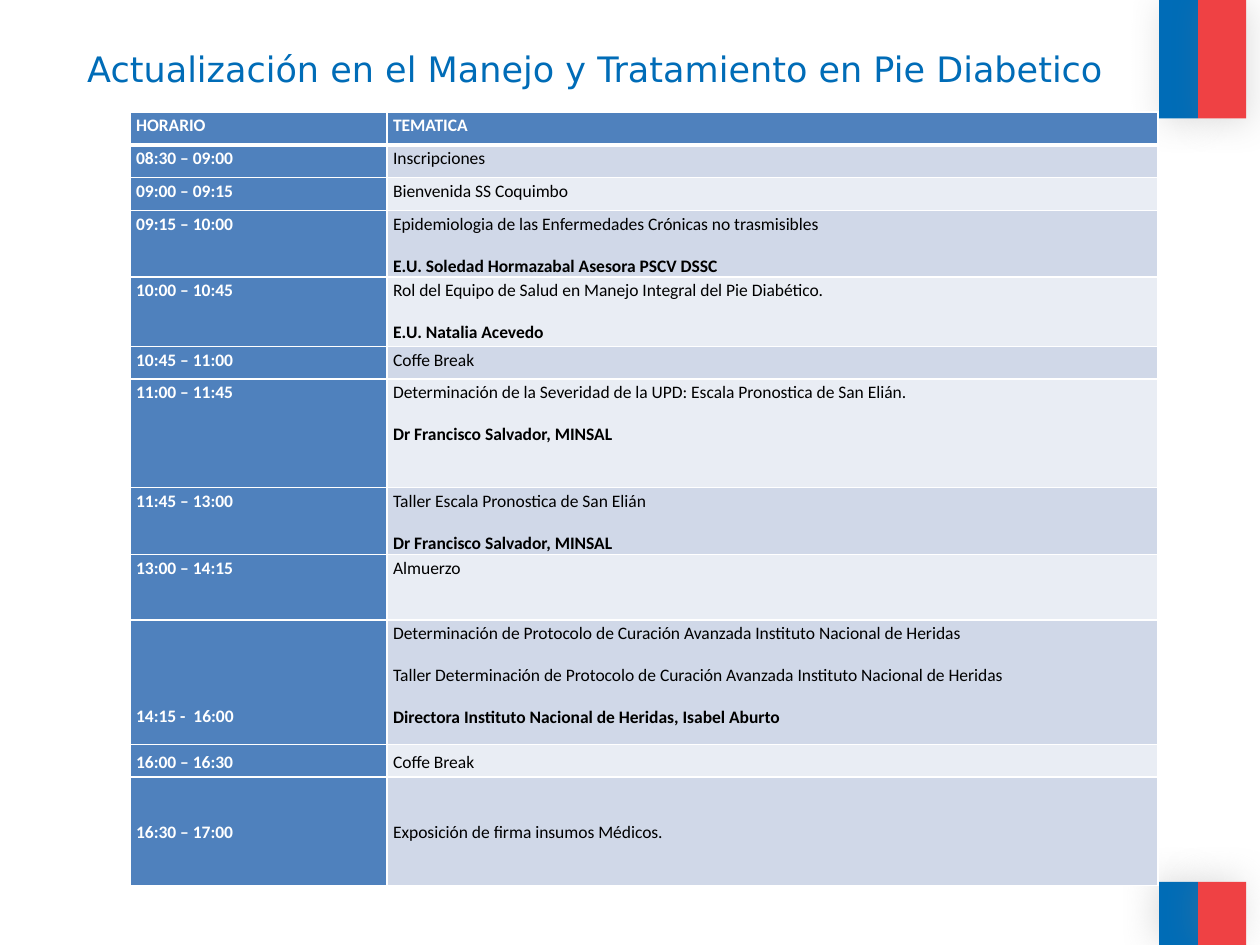
import pptx
import pptx.util
import pptx.oxml
import pptx.oxml.ns
import pptx.dml.color
import pptx.enum.shapes
import pptx.enum.text
from dataclasses import dataclass

Inches = pptx.util.Inches
Pt = pptx.util.Pt
ANCHOR = pptx.enum.text.MSO_ANCHOR


@dataclass(frozen=True)
class Theme:
    blue: str = "006CB7"
    red: str = "EF4144"
    header: str = "4F81BD"
    bands: tuple = ("D0D8E8", "E9EDF4")
    white: str = "FFFFFF"
    black: str = "000000"
    shadow: str = "808080"
    title_font: str = "DejaVu Sans"
    body_font: str = "Calibri"
    title_size: int = 20
    body_size: int = 10


@dataclass
class Session:
    time: str
    lines: tuple
    height: float
    speaker: str = ""
    anchor: ANCHOR = ANCHOR.TOP
    time_offset: float = 0
    topic_offset: float = 0


LINE_STEP = 0.33  # one text line with the space after it

SESSIONS = (
    Session("08:30 – 09:00", ("Inscripciones",), 0.26),
    Session("09:00 – 09:15", ("Bienvenida SS Coquimbo",), 0.26),
    Session("09:15 – 10:00", ("Epidemiologia de las Enfermedades Crónicas no trasmisibles",), 0.53,
            "E.U. Soledad Hormazabal Asesora PSCV DSSC"),
    Session("10:00 – 10:45", ("Rol del Equipo de Salud en Manejo Integral del Pie Diabético.",), 0.55,
            "E.U. Natalia Acevedo"),
    Session("10:45 – 11:00", ("Coffe Break",), 0.26),
    Session("11:00 – 11:45",
            ("Determinación de la Severidad de la UPD: Escala Pronostica de San Elián.",), 0.86,
            "Dr Francisco Salvador, MINSAL"),
    Session("11:45 – 13:00", ("Taller Escala Pronostica de San Elián",), 0.53,
            "Dr Francisco Salvador, MINSAL"),
    Session("13:00 – 14:15", ("Almuerzo",), 0.52),
    Session("14:15 -  16:00",
            ("Determinación de Protocolo de Curación Avanzada Instituto Nacional de Heridas",
             "Taller Determinación de Protocolo de Curación Avanzada Instituto Nacional de Heridas"),
            0.99, "Directora Instituto Nacional de Heridas, Isabel Aburto",
            time_offset=2 * LINE_STEP),
    Session("16:00 – 16:30", ("Coffe Break",), 0.26, anchor=ANCHOR.MIDDLE),
    Session("16:30 – 17:00", ("Exposición de firma insumos Médicos.",), 0.86,
            time_offset=LINE_STEP, topic_offset=LINE_STEP),
)


class SlideBuilder:
    def __init__(self, page, theme):
        self.page = page
        self.theme = theme

    @staticmethod
    def color(value):
        return pptx.dml.color.RGBColor.from_string(value)

    def style(self, para, font, size, color, bold=False):
        for span in para.runs:
            span.font.name = font
            span.font.size = Pt(size)
            span.font.bold = bold
            span.font.color.rgb = self.color(color)

    def title(self, text, left, top, width, height):
        box = self.page.shapes.title
        box.left, box.top = Inches(left), Inches(top)
        box.width, box.height = Inches(width), Inches(height)
        frame = box.text_frame
        frame.text = text
        frame.auto_size = pptx.enum.text.MSO_AUTO_SIZE.NONE
        frame.vertical_anchor = ANCHOR.TOP
        frame.margin_top = Inches(0.07)
        para = frame.paragraphs[0]
        para.alignment = pptx.enum.text.PP_ALIGN.CENTER
        self.style(para, self.theme.title_font, self.theme.title_size, self.theme.blue)

    def block(self, left, top, width, height, color, shadow_angle):
        box = self.page.shapes.add_shape(
            pptx.enum.shapes.MSO_SHAPE.RECTANGLE,
            Inches(left), Inches(top), Inches(width), Inches(height))
        box.fill.solid()
        box.fill.fore_color.rgb = self.color(color)
        box.line.fill.background()
        box.shadow.inherit = False
        effects = box._element.spPr.find(pptx.oxml.ns.qn("a:effectLst"))
        effects.append(pptx.oxml.parse_xml(
            f'<a:outerShdw {pptx.oxml.ns.nsdecls("a")} blurRad="{Pt(20)}" dist="{Pt(3)}" '
            f'dir="{shadow_angle * 60000}" rotWithShape="0">'
            f'<a:srgbClr val="{self.theme.shadow}"><a:alpha val="25000"/></a:srgbClr>'
            '</a:outerShdw>'))

    def borders(self, cell, top, bottom):
        for side, width in (("L", 1), ("R", 1), ("T", top), ("B", bottom)):
            cell._tc.get_or_add_tcPr().append(pptx.oxml.parse_xml(
                f'<a:ln{side} {pptx.oxml.ns.nsdecls("a")} w="{Pt(width)}"><a:solidFill>'
                f'<a:srgbClr val="{self.theme.white}"/></a:solidFill></a:ln{side}>'))

    def cell(self, cell, lines, fill, color, bold_lines,
             anchor=ANCHOR.TOP, offset=0, top=1, bottom=1):
        self.borders(cell, top, bottom)
        cell.fill.solid()
        cell.fill.fore_color.rgb = self.color(fill)
        cell.margin_left = cell.margin_right = Inches(0.05)
        cell.margin_top, cell.margin_bottom = Inches(offset), 0
        cell.vertical_anchor = anchor
        cell.text_frame.text = "\n".join(lines)
        for line, para in zip(lines, cell.text_frame.paragraphs):
            para.line_spacing = 1.15
            para.space_after = Pt(10)
            self.style(para, self.theme.body_font, self.theme.body_size, color, line in bold_lines)

    def schedule(self, left, top, widths, headings, sessions, header_height=0.26):
        theme = self.theme
        heights = [header_height] + [session.height for session in sessions]
        table = self.page.shapes.add_table(
            len(heights), len(widths), Inches(left), Inches(top),
            Inches(sum(widths)), Inches(sum(heights))).table
        for column, width in zip(table.columns, widths):
            column.width = Inches(width)
        for row, height in zip(table.rows, heights):
            row.height = Inches(height)
        for index, heading in enumerate(headings):
            self.cell(table.cell(0, index), (heading,), theme.header, theme.white,
                      (heading,), bottom=3)
        for index, session in enumerate(sessions):
            rule = 3 if index == 0 else 1
            self.cell(table.cell(index + 1, 0), (session.time,), theme.header, theme.white,
                      (session.time,), session.anchor, session.time_offset, rule)
            speakers = (session.speaker,) if session.speaker else ()
            self.cell(table.cell(index + 1, 1), session.lines + speakers,
                      theme.bands[index % 2], theme.black, speakers,
                      session.anchor, session.topic_offset, rule)


def main():
    deck = pptx.Presentation()
    deck.slide_width, deck.slide_height = Inches(10), Inches(7.5)
    theme = Theme()
    page = deck.slides.add_slide(deck.slide_layouts[5])
    builder = SlideBuilder(page, theme)

    # Two-colour flags at the top and bottom right
    for top, height, angle in ((0, 0.94, 45), (7, 0.5, 215)):
        builder.block(9.2, top, 0.31, height, theme.blue, angle)
        builder.block(9.51, top, 0.38, height, theme.red, angle)

    # Title
    builder.title("Actualización en el Manejo y Tratamiento en Pie Diabetico",
                  0.26, 0.31, 8.93, 0.54)

    # Programme of the day
    builder.schedule(1.03, 0.89, (2.04, 6.12), ("HORARIO", "TEMATICA"), SESSIONS)

    deck.save("out.pptx")


if __name__ == "__main__":
    main()
